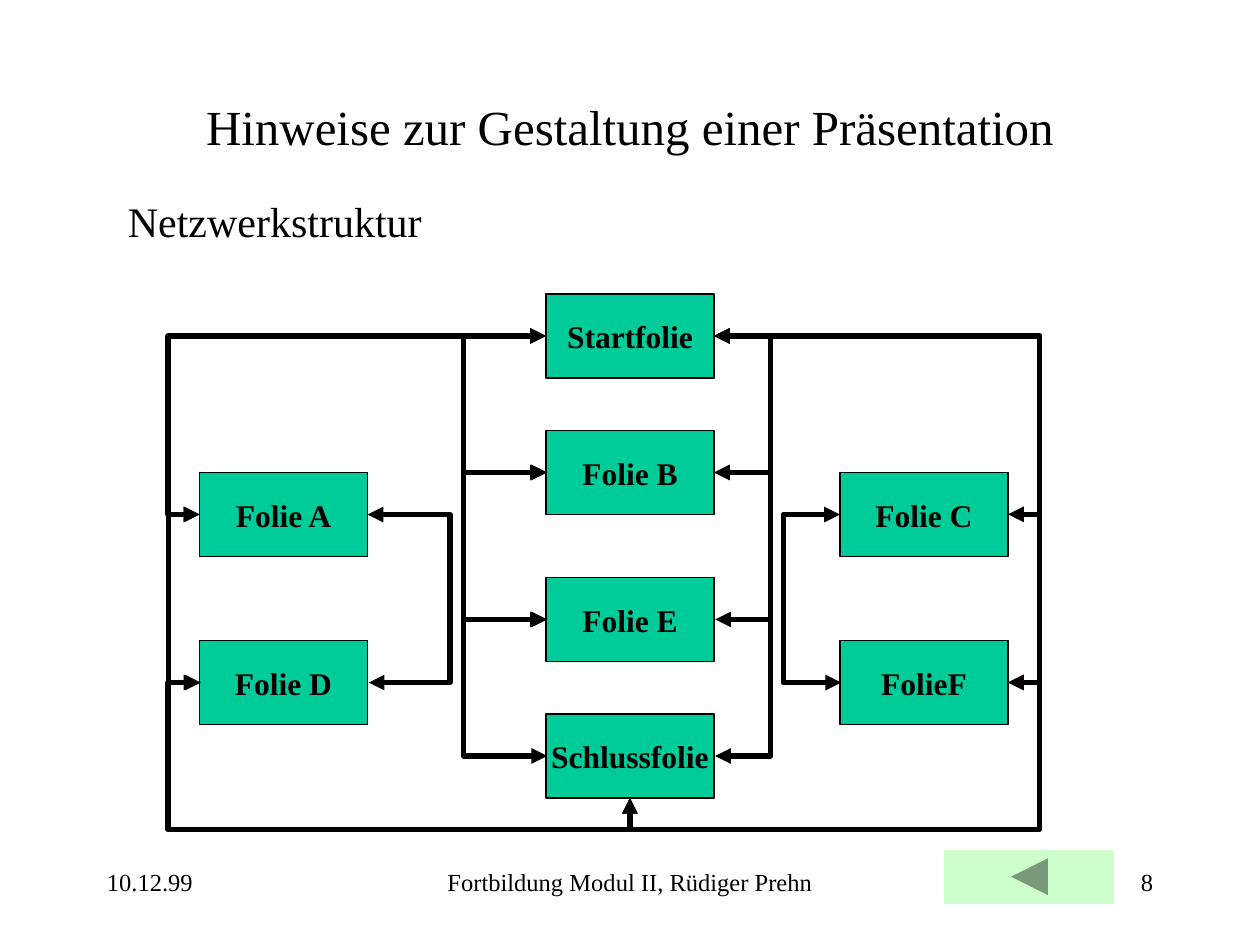
import pptx
import pptx.dml.color
import pptx.enum.shapes
import pptx.enum.text
import pptx.oxml.ns
import pptx.util
import lxml.etree

COLORS = {"text": "000000", "box": "00CC99", "line": "000000", "button": "CCFFCC"}
FONT = "Times New Roman"
COLUMNS_PER_INCH = 12
BOX_WIDTH, BOX_HEIGHT = 16, 8
LEFT, BOTTOM, RIGHT = 1, 2, 3
ALIGN = pptx.enum.text.PP_ALIGN
SHAPES = pptx.enum.shapes.MSO_SHAPE

BOXES = {
    "Startfolie": (52, 28),
    "Folie B": (52, 41),
    "Folie E": (52, 55),
    "Schlussfolie": (52, 68),
    "Folie A": (19, 45),
    "Folie D": (19, 61),
    "Folie C": (80, 45),
    "FolieF": (80, 61),
}

SIDE_LINKS = [
    ("Folie A", "Startfolie", LEFT, 16),
    ("Folie A", "Folie D", LEFT, 16),
    ("Startfolie", "FolieF", RIGHT, 99),
    ("Startfolie", "Folie C", RIGHT, 99),
    ("Startfolie", "Folie B", LEFT, 44),
    ("Folie B", "Folie E", LEFT, 44),
    ("Folie E", "Schlussfolie", LEFT, 44),
    ("Folie A", "Folie D", RIGHT, 43),
    ("Startfolie", "Schlussfolie", RIGHT, 73.5),
    ("Folie B", "Folie E", RIGHT, 73.5),
    ("Folie C", "FolieF", LEFT, 74.5),
]
BOTTOM_LINKS = [("Folie D", LEFT, 16), ("FolieF", RIGHT, 99)]
BOTTOM_LANE = 79


def grid(count):
    return pptx.util.Inches(count / COLUMNS_PER_INCH)


def color(name):
    return pptx.dml.color.RGBColor.from_string(COLORS[name])


def write_text(shape, text, size, alignment, bold=False):
    shape.text_frame.text = text
    paragraph = shape.text_frame.paragraphs[0]
    paragraph.alignment = alignment
    font = paragraph.runs[0].font
    font.name, font.size, font.bold = FONT, pptx.util.Pt(size), bold
    font.color.rgb = color("text")


def add_title(slide, text):
    title = slide.shapes.title
    title.left, title.top, title.width, title.height = map(grid, (9, 8, 102, 8))
    write_text(title, text, 28, ALIGN.CENTER)
    title.text_frame.vertical_anchor = pptx.enum.text.MSO_ANCHOR.MIDDLE


def add_label(slide, text, area, size, alignment):
    label = slide.shapes.add_textbox(*map(grid, area))
    label.text_frame.word_wrap = True
    write_text(label, text, size, alignment)


def add_filled_shape(slide, kind, area, fill, line):
    shape = slide.shapes.add_shape(kind, *map(grid, area))
    shape.shadow.inherit = False
    shape.fill.solid()
    shape.fill.fore_color.rgb = color(fill)
    shape.line.color.rgb = color(line)
    shape.line.width = pptx.util.Pt(0.75)
    return shape


def add_box(slide, text, position):
    area = (*position, BOX_WIDTH, BOX_HEIGHT)
    box = add_filled_shape(slide, SHAPES.RECTANGLE, area, "box", "line")
    box.text_frame.word_wrap = False
    box.text_frame.vertical_anchor = pptx.enum.text.MSO_ANCHOR.MIDDLE
    write_text(box, text, 18, ALIGN.CENTER, bold=True)
    return box


def site_point(name, site):
    left, top = BOXES[name]
    offsets = {
        LEFT: (0, BOX_HEIGHT / 2),
        RIGHT: (BOX_WIDTH, BOX_HEIGHT / 2),
        BOTTOM: (BOX_WIDTH / 2, BOX_HEIGHT),
    }
    return left + offsets[site][0], top + offsets[site][1]


def add_link(slide, boxes, start, end, lanes):
    begin_point, end_point = site_point(*start), site_point(*end)
    link = slide.shapes.add_connector(
        pptx.enum.shapes.MSO_CONNECTOR.ELBOW, *map(grid, begin_point + end_point)
    )
    link.begin_connect(boxes[start[0]], start[1])
    link.end_connect(boxes[end[0]], end[1])
    if link.width == 0:
        link.width = pptx.util.Inches(0.01)
    link.line.color.rgb = color("line")
    link.line.width = pptx.util.Pt(3)

    qn = pptx.oxml.ns.qn
    properties = link._element.spPr
    geometry = properties.find(qn("a:prstGeom"))
    geometry.set("prst", f"bentConnector{len(lanes) + 2}")
    adjustments = geometry.find(qn("a:avLst"))
    if adjustments is None:
        adjustments = lxml.etree.SubElement(geometry, qn("a:avLst"))
    extents = (link.width, link.height)
    for axis, lane in enumerate(lanes):
        direction = -1 if end_point[axis] < begin_point[axis] else 1
        share = direction * grid(lane - begin_point[axis]) / extents[axis]
        guide = lxml.etree.SubElement(adjustments, qn("a:gd"))
        guide.set("name", f"adj{axis + 1}")
        guide.set("fmla", f"val {round(share * 100000)}")
    outline = properties.find(qn("a:ln"))
    for tag in ("a:headEnd", "a:tailEnd"):
        lxml.etree.SubElement(outline, qn(tag)).set("type", "triangle")
    lxml.etree.SubElement(properties, qn("a:effectLst"))


def main():
    presentation = pptx.Presentation()
    presentation.slide_width = pptx.util.Inches(10)
    presentation.slide_height = pptx.util.Inches(7.5)
    slide = presentation.slides.add_slide(presentation.slide_layouts[5])

    add_title(slide, "Hinweise zur Gestaltung einer Präsentation")
    add_label(slide, "Netzwerkstruktur", (11, 18, 98, 6), 24, ALIGN.LEFT)
    add_label(slide, "10.12.99", (9, 82, 25, 6), 14, ALIGN.LEFT)
    add_label(slide, "Fortbildung Modul II, Rüdiger Prehn", (41, 82, 38, 6), 14, ALIGN.CENTER)
    add_label(slide, "8", (86, 82, 25, 6), 14, ALIGN.RIGHT)

    boxes = {name: add_box(slide, name, position) for name, position in BOXES.items()}
    for start, end, side, lane in SIDE_LINKS:
        add_link(slide, boxes, (start, side), (end, side), [lane])
    for start, side, lane in BOTTOM_LINKS:
        add_link(slide, boxes, (start, side), ("Schlussfolie", BOTTOM), [lane, BOTTOM_LANE])

    back_button = SHAPES.ACTION_BUTTON_BACK_OR_PREVIOUS
    add_filled_shape(slide, back_button, (90, 81, 16, 5), "button", "button")
    presentation.save("out.pptx")


if __name__ == "__main__":
    main()
